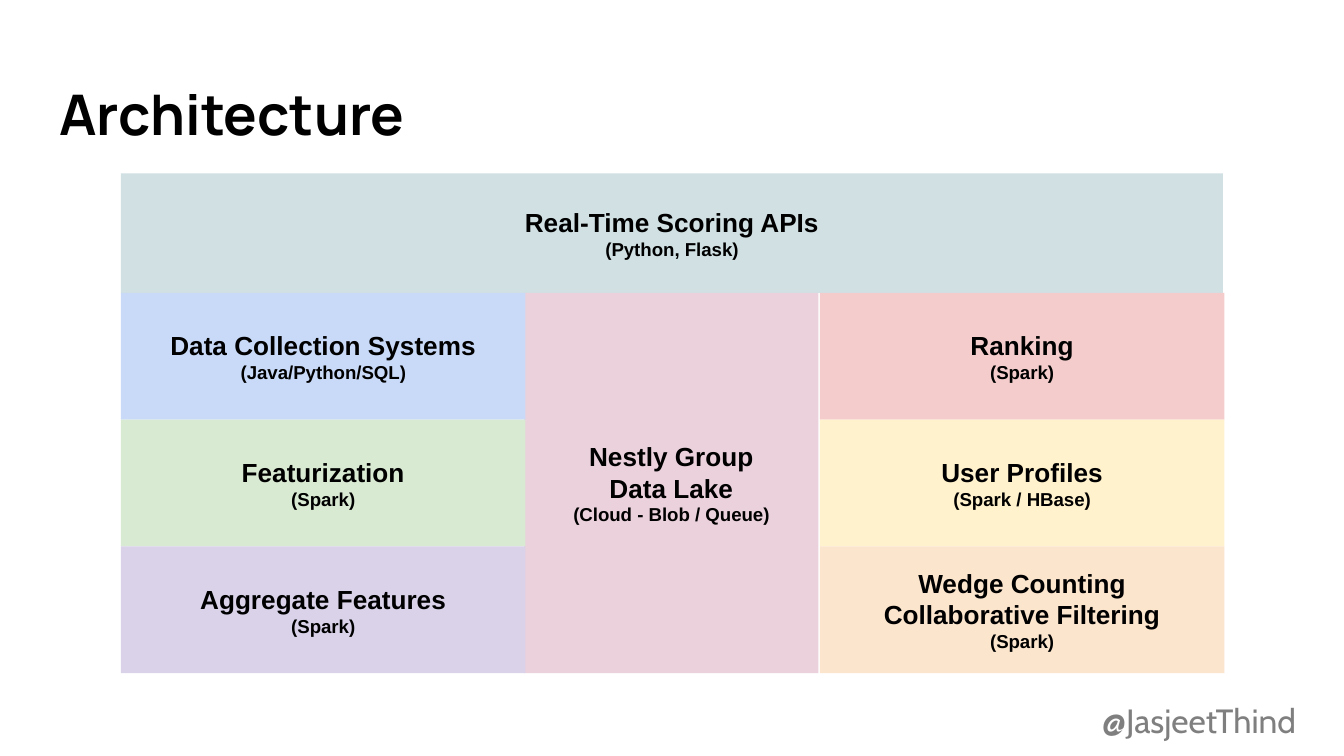
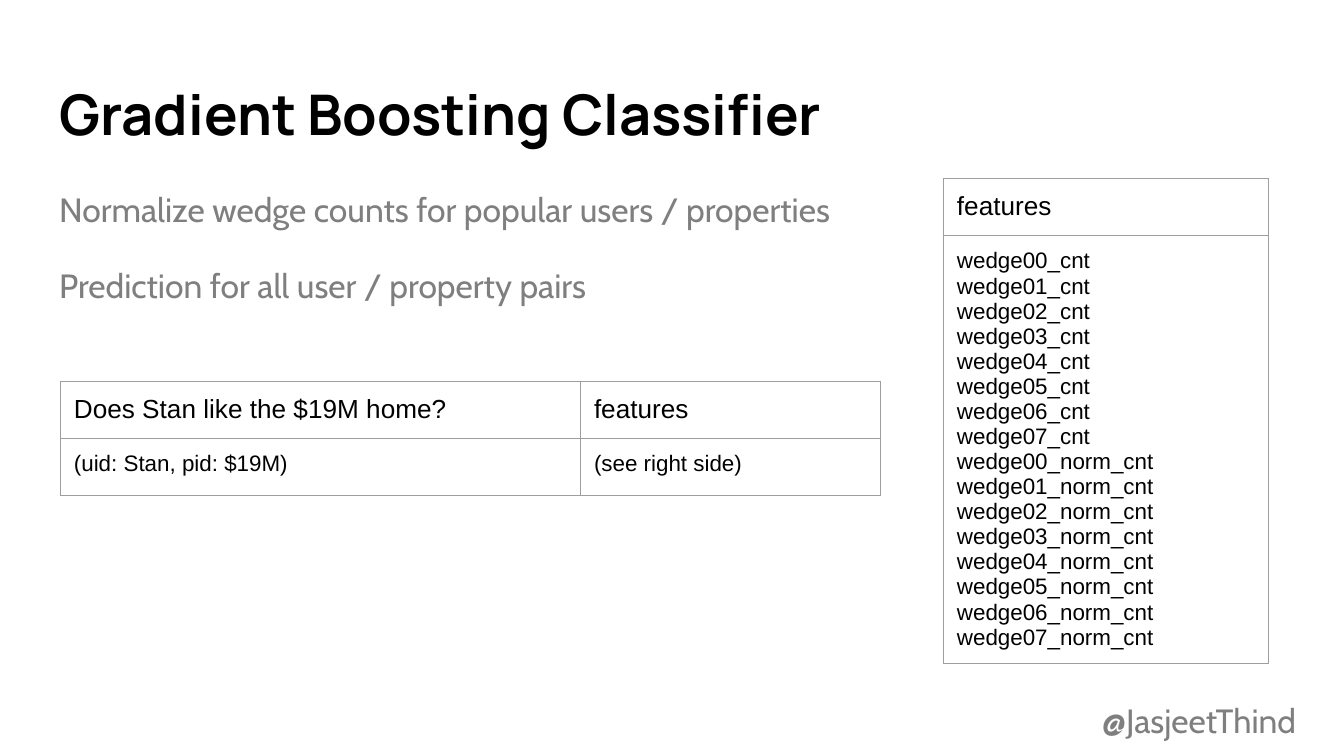
from dataclasses import dataclass
from typing import Any, NamedTuple

import lxml.etree
import pptx
import pptx.dml.color
import pptx.enum.shapes
import pptx.enum.text
import pptx.oxml.ns
import pptx.util

Inches = pptx.util.Inches
Pt = pptx.util.Pt
Align = pptx.enum.text.PP_ALIGN
Anchor = pptx.enum.text.MSO_ANCHOR


class TextStyle(NamedTuple):
    font: str
    size: int
    color: str
    bold: bool = False


@dataclass(frozen=True)
class Theme:
    title: TextStyle = TextStyle("Manrope", 30, "000000", True)
    body: TextStyle = TextStyle("Cabin", 18, "7F7F7F")
    block_name: TextStyle = TextStyle("Arial", 14, "000000", True)
    block_tools: TextStyle = TextStyle("Arial", 10, "000000", True)
    table_head: TextStyle = TextStyle("Arial", 14, "000000")
    table_text: TextStyle = TextStyle("Arial", 12, "000000")
    border: str = "9E9E9E"
    border_width: float = 0.75
    api: str = "D0E0E3"
    lake: str = "EAD1DC"
    collection: str = "C9DAF8"
    featurization: str = "D9EAD3"
    aggregates: str = "D9D2E9"
    ranking: str = "F4CCCC"
    profiles: str = "FFF2CC"
    wedges: str = "FCE5CD"


THEME = Theme()


class Area(NamedTuple):
    left: float
    top: float
    width: float
    height: float

    def lengths(self) -> list[pptx.util.Length]:
        return [Inches(value) for value in self]


class Block(NamedTuple):
    names: list[str]
    tools: str
    fill: str


class Grid(NamedTuple):
    """A table: each cell is a list of lines, the first row is the head."""
    area: Area
    columns: list[float]
    rows: list[float]
    cells: list[list[list[str]]]


TITLE_AREA = Area(0.34, 0.49, 9.32, 0.68)
BODY_AREA = Area(0.34, 1.26, 9.32, 3.74)
HANDLE_AREA = Area(8.1, 5.09, 1.9, 0.54)
HANDLE = "@JasjeetThind"

API_AREA = Area(0.9, 1.29, 8.2, 0.89)
LAKE_AREA = Area(3.9, 2.18, 2.19, 2.83)
SIDE_WIDTH = 3.01
LEFT_COLUMN, RIGHT_COLUMN = 0.9, 6.1

API = Block(["Real-Time Scoring APIs"], "(Python, Flask)", THEME.api)
LAKE = Block(["Nestly Group", "Data Lake"], "(Cloud - Blob / Queue)", THEME.lake)
SIDE_BLOCKS = {
    LEFT_COLUMN: [
        Block(["Data Collection Systems"], "(Java/Python/SQL)", THEME.collection),
        Block(["Featurization"], "(Spark)", THEME.featurization),
        Block(["Aggregate Features"], "(Spark)", THEME.aggregates),
    ],
    RIGHT_COLUMN: [
        Block(["Ranking"], "(Spark)", THEME.ranking),
        Block(["User Profiles"], "(Spark / HBase)", THEME.profiles),
        Block(["Wedge Counting", "Collaborative Filtering"], "(Spark)", THEME.wedges),
    ],
}

WEDGE_FEATURES = [f"wedge{number:02d}{kind}_cnt"
                  for kind in ("", "_norm") for number in range(8)]
FEATURE_GRID = Grid(Area(7.02, 1.33, 2.42, 3.83), [2.42], [0.42, 0.42],
                    [[["features"]], [WEDGE_FEATURES]])
EXAMPLE_GRID = Grid(Area(0.45, 2.84, 6.1, 0.87), [3.87, 2.23], [0.42, 0.43], [
    [["Does Stan like the $19M home?"], ["features"]],
    [["(uid: Stan, pid: $19M)"], ["(see right side)"]],
])


def rgb(color: str) -> pptx.dml.color.RGBColor:
    return pptx.dml.color.RGBColor.from_string(color)


def write(frame: Any, lines: list[tuple[str, TextStyle]],
          align: Align = Align.LEFT) -> None:
    """Write one paragraph for each line, in its style."""
    for index, (text, style) in enumerate(lines):
        para = frame.paragraphs[0] if index == 0 else frame.add_paragraph()
        para.text = text
        para.alignment = align
        para.font.name = style.font
        para.font.size = Pt(style.size)
        para.font.bold = style.bold
        para.font.color.rgb = rgb(style.color)


def prepare_frame(frame: Any, anchor: Anchor) -> None:
    frame.word_wrap = True
    frame.auto_size = pptx.enum.text.MSO_AUTO_SIZE.NONE
    frame.vertical_anchor = anchor
    frame.margin_left = frame.margin_right = Inches(0.1)
    frame.margin_top = frame.margin_bottom = Inches(0.1)


def fill_placeholder(box: Any, area: Area, lines: list[str], style: TextStyle) -> None:
    box.left, box.top, box.width, box.height = area.lengths()
    prepare_frame(box.text_frame, Anchor.TOP)
    write(box.text_frame, [(line, style) for line in lines])


def add_page(deck: Any, title: str, body: list[str]) -> Any:
    """Add a titled page, with body text if there is any."""
    page = deck.slides.add_slide(deck.slide_layouts[1 if body else 5])
    fill_placeholder(page.shapes.title, TITLE_AREA, [title], THEME.title)
    if body:
        box = page.placeholders[1]
        fill_placeholder(box, BODY_AREA, body, THEME.body)
        for para in box.text_frame.paragraphs:
            para.line_spacing = 1.15
            para.space_before = Pt(16)
            properties = para._p.get_or_add_pPr()
            properties.set("marL", "0")
            properties.set("indent", "0")
            lxml.etree.SubElement(properties, pptx.oxml.ns.qn("a:buNone"))
            # Bullet settings come before the paragraph's default font.
            properties.append(properties.find(pptx.oxml.ns.qn("a:defRPr")))
    return page


def add_handle(page: Any) -> None:
    box = page.shapes.add_textbox(*HANDLE_AREA.lengths())
    prepare_frame(box.text_frame, Anchor.MIDDLE)
    write(box.text_frame, [(HANDLE, THEME.body)])


def add_block(page: Any, block: Block, area: Area) -> None:
    box = page.shapes.add_shape(pptx.enum.shapes.MSO_SHAPE.RECTANGLE, *area.lengths())
    box.shadow.inherit = False
    box.fill.solid()
    box.fill.fore_color.rgb = rgb(block.fill)
    box.line.fill.background()
    prepare_frame(box.text_frame, Anchor.MIDDLE)
    lines = [(name, THEME.block_name) for name in block.names]
    write(box.text_frame, lines + [(block.tools, THEME.block_tools)], Align.CENTER)


def set_borders(cell: Any) -> None:
    properties = cell._tc.get_or_add_tcPr()
    for index, side in enumerate(("lnL", "lnR", "lnT", "lnB")):
        line = lxml.etree.Element(pptx.oxml.ns.qn(f"a:{side}"),
                                  w=str(Pt(THEME.border_width)))
        fill = lxml.etree.SubElement(line, pptx.oxml.ns.qn("a:solidFill"))
        lxml.etree.SubElement(fill, pptx.oxml.ns.qn("a:srgbClr"), val=THEME.border)
        properties.insert(index, line)


def add_grid(page: Any, grid: Grid) -> None:
    holder = page.shapes.add_table(len(grid.rows), len(grid.columns),
                                   *grid.area.lengths())
    table = holder.table
    table.first_row = table.horz_banding = False
    for column, width in zip(table.columns, grid.columns):
        column.width = Inches(width)
    for row, height in zip(table.rows, grid.rows):
        row.height = Inches(height)
    holder.height = Inches(grid.area.height)
    for row_index, row in enumerate(grid.cells):
        style = THEME.table_text if row_index else THEME.table_head
        for column_index, lines in enumerate(row):
            cell = table.cell(row_index, column_index)
            cell.fill.background()
            cell.margin_left = cell.margin_right = Inches(0.1)
            cell.margin_top = cell.margin_bottom = Inches(0.1)
            write(cell.text_frame, [(line, style) for line in lines])
            set_borders(cell)


def add_architecture(deck: Any) -> None:
    page = add_page(deck, "Architecture", [])
    add_block(page, API, API_AREA)
    add_block(page, LAKE, LAKE_AREA)
    for left, blocks in SIDE_BLOCKS.items():
        height = LAKE_AREA.height / len(blocks)
        for index, block in enumerate(blocks):
            top = LAKE_AREA.top + index * height
            add_block(page, block, Area(left, top, SIDE_WIDTH, height))
    add_handle(page)


def add_classifier(deck: Any) -> None:
    page = add_page(deck, "Gradient Boosting Classifier", [
        "Normalize wedge counts for popular users / properties",
        "Prediction for all user / property pairs",
    ])
    add_grid(page, FEATURE_GRID)
    add_grid(page, EXAMPLE_GRID)
    add_handle(page)


def main() -> None:
    deck = pptx.Presentation()
    deck.slide_width = Inches(10)
    deck.slide_height = Inches(10 * 9 / 16)
    add_architecture(deck)
    add_classifier(deck)
    deck.save("out.pptx")


if __name__ == "__main__":
    main()
